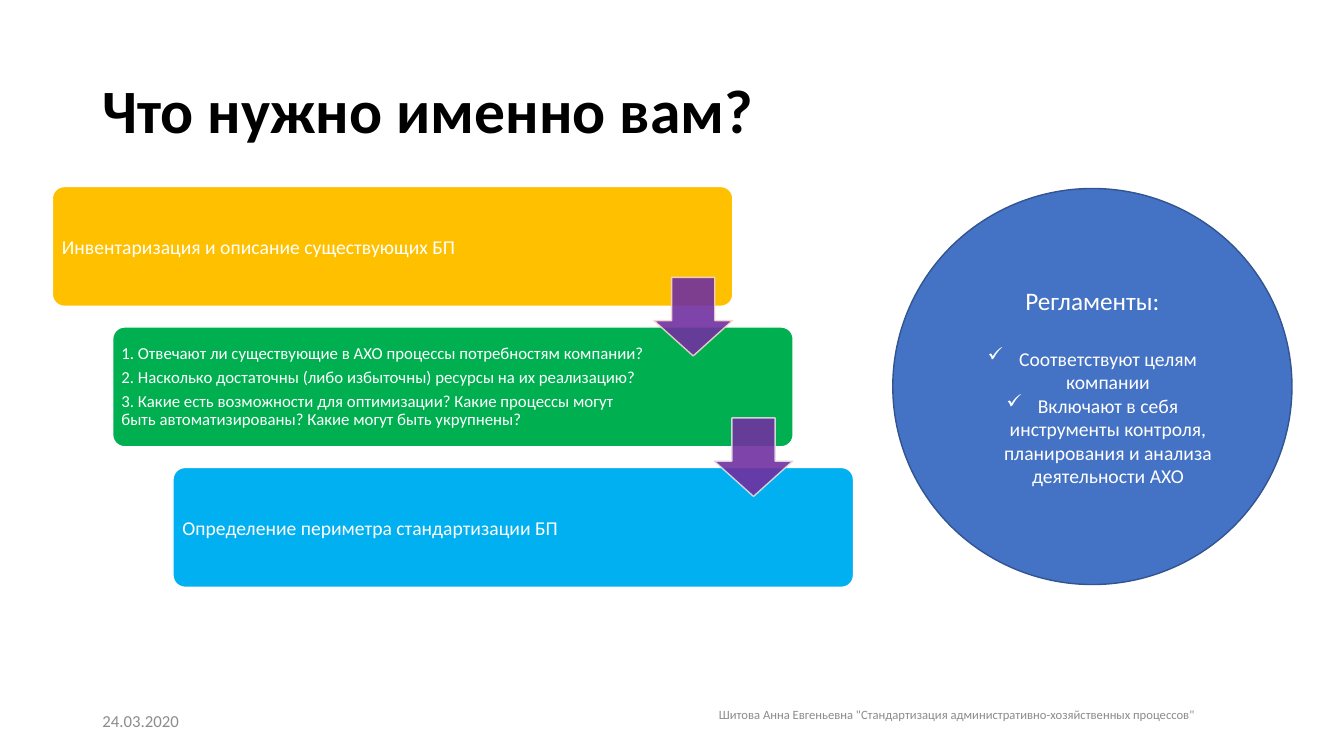
"""Build the slide on which regulations a company needs."""
from lxml import etree
from pptx import Presentation
from pptx.dml.color import RGBColor
from pptx.enum import shapes, text
from pptx.oxml.ns import qn
from pptx.util import Cm, Pt

BLACK = RGBColor(0x00, 0x00, 0x00)
WHITE = RGBColor(0xFF, 0xFF, 0xFF)
GRAY = RGBColor(0x8C, 0x8C, 0x8C)
AMBER = RGBColor(0xFF, 0xC0, 0x00)
GREEN = RGBColor(0x00, 0xB0, 0x50)
SKY = RGBColor(0x00, 0xB0, 0xF0)
PURPLE = RGBColor(0x70, 0x30, 0xA0)
PEACH = RGBColor(0xF8, 0xD7, 0xCE)
SILVER = RGBColor(0xE1, 0xE1, 0xE1)
BLUE = RGBColor(0x44, 0x72, 0xC4)
NAVY = RGBColor(0x32, 0x54, 0x91)

deck = Presentation()
deck.slide_width, deck.slide_height = Cm(33.87), Cm(19.05)
slide = deck.slides.add_slide(deck.slide_layouts[6])


def add_form(kind, box, fill, line):
    form = slide.shapes.add_shape(kind, *map(Cm, box))
    form.shadow.inherit = False
    form.fill.solid()
    form.fill.fore_color.rgb = fill
    form.line.color.rgb = line
    form.line.width = Pt(1)
    return form


def add_words(box, lines, size, color, spacing=1.0, inset=None):
    frame = slide.shapes.add_textbox(*map(Cm, box)).text_frame
    frame.word_wrap = True
    frame.vertical_anchor = text.MSO_ANCHOR.MIDDLE
    if inset is not None:
        frame.margin_left = frame.margin_right = Cm(inset)
        frame.margin_top = frame.margin_bottom = Cm(inset)
    frame.text = "\n".join(lines)
    for paragraph in frame.paragraphs:
        paragraph.font.name = "Calibri"
        paragraph.font.size = Pt(size)
        paragraph.font.color.rgb = color
        paragraph.line_spacing = spacing
        paragraph.space_after = Pt(4)
    return frame


title = add_words((2.33, 1.01, 29.21, 3.68), ["Что нужно именно вам?"], 44, BLACK, 0.9)
title.paragraphs[0].font.bold = True
add_words((2.33, 17.66, 7.62, 1.01), ["24.03.2020"], 12, GRAY)
footer = add_words(
    (16.69, 17.53, 14.83, 1.01),
    ['Шитова Анна Евгеньевна "Стандартизация административно-хозяйственных процессов"'],
    9, GRAY, 0.9)
footer.paragraphs[0].alignment = text.PP_ALIGN.CENTER

steps = [
    (AMBER, 14, 1.0, 0.15, ["Инвентаризация и описание существующих БП"]),
    (GREEN, 12, 0.9, 0.13, [
        "1. Отвечают ли существующие в АХО процессы потребностям компании?",
        "2. Насколько достаточны (либо избыточны) ресурсы на их реализацию?",
        "3. Какие есть возможности для оптимизации? Какие процессы могут "
        "быть автоматизированы? Какие могут быть укрупнены?"]),
    (SKY, 14, 1.0, 0.15, ["Определение периметра стандартизации БП"]),
]
SHIFT, DROP = 1.52, 3.54
for index, (fill, size, spacing, inset, lines) in enumerate(steps):
    left, top = 1.32 + index * SHIFT, 4.7 + index * DROP
    step = add_form(shapes.MSO_SHAPE.ROUNDED_RECTANGLE, (left, top, 17.15, 3.02), fill, WHITE)
    step.adjustments[0] = 0.1
    add_words((left + 0.09, top + 0.09, 13.49, 2.84), lines, size, WHITE, spacing, inset)

for index, outline in enumerate((PEACH, SILVER)):
    arrow = add_form(
        shapes.MSO_SHAPE.DOWN_ARROW,
        (16.48 + index * SHIFT, 6.99 + index * DROP, 1.98, 1.98), PURPLE, outline)
    arrow.adjustments[0], arrow.adjustments[1] = 0.45, 0.55
    arrow.adjustments[0], arrow.adjustments[1] = 0.55, 0.45
    for color in arrow.element.spPr.iter(qn("a:srgbClr")):
        etree.SubElement(color, qn("a:alpha")).set("val", "90000")

regulations = add_form(shapes.MSO_SHAPE.OVAL, (22.5, 4.75, 10.06, 9.98), BLUE, NAVY).text_frame
regulations.word_wrap = True
regulations.vertical_anchor = text.MSO_ANCHOR.MIDDLE
regulations.text = "\n".join([
    "Регламенты:",
    "Соответствуют целям компании",
    "Включают в себя инструменты контроля, планирования и анализа деятельности АХО",
])
for paragraph in regulations.paragraphs:
    paragraph.alignment = text.PP_ALIGN.CENTER
    paragraph.font.name = "Calibri"
    paragraph.font.size = Pt(14)
    paragraph.font.color.rgb = WHITE
heading, *goals = regulations.paragraphs
heading.font.size = Pt(18)
heading.space_after = Pt(22)
for goal in goals:
    properties = goal._p.get_or_add_pPr()
    properties.set("marL", str(Cm(0.79)))
    properties.set("indent", str(Cm(-0.79)))
    bullet = etree.Element(qn("a:buChar"), char="✓")
    properties.find(qn("a:defRPr")).addprevious(bullet)

deck.save("out.pptx")
